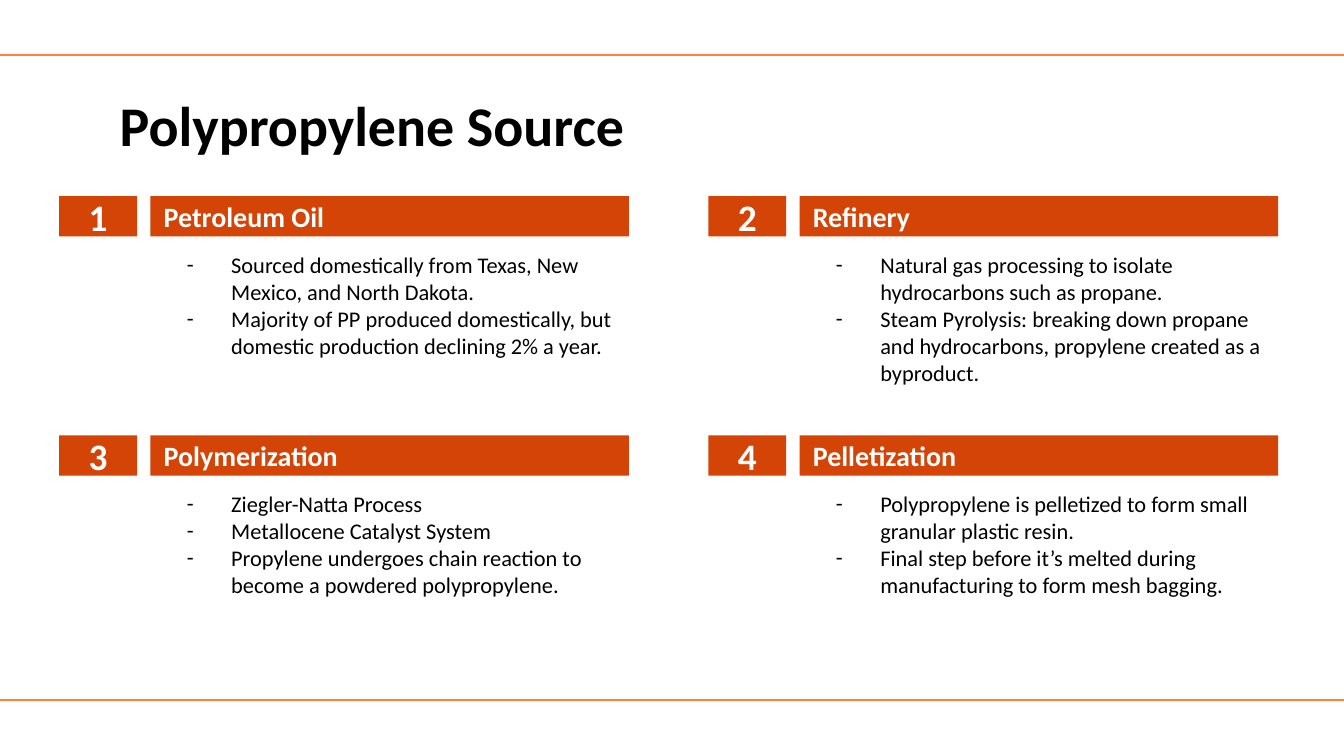
import pptx
import pptx.util
import pptx.dml.color
import pptx.enum.shapes
import pptx.enum.text
from lxml import etree
from pptx.oxml.ns import qn
from pptx.util import Inches

COLORS = {"bar": "D34406", "rule": "FE8239", "ink": "000000", "light": "FFFFFF"}
ALIGN = pptx.enum.text.PP_ALIGN
ANCHOR = pptx.enum.text.MSO_ANCHOR

STEPS = [
    ("Petroleum Oil", [
        "Sourced domestically from Texas, New Mexico, and North Dakota.",
        "Majority of PP produced domestically, but domestic production declining 2% a year."]),
    ("Refinery", [
        "Natural gas processing to isolate hydrocarbons such as propane.",
        "Steam Pyrolysis: breaking down propane and hydrocarbons, "
        "propylene created as a byproduct."]),
    ("Polymerization", [
        "Ziegler-Natta Process",
        "Metallocene Catalyst System",
        "Propylene undergoes chain reaction to become a powdered polypropylene."]),
    ("Pelletization", [
        "Polypropylene is pelletized to form small granular plastic resin.",
        "Final step before it’s melted during manufacturing to form mesh bagging."]),
]


def rgb(name):
    return pptx.dml.color.RGBColor.from_string(COLORS[name])


def dash(para):
    """Give the paragraph a hanging dash bullet."""
    props = para._p.get_or_add_pPr()
    props.set("marL", str(Inches(0.5)))
    props.set("indent", str(Inches(-0.33)))
    tint = etree.SubElement(props, qn("a:buClr"))
    etree.SubElement(tint, qn("a:srgbClr"), val=COLORS["ink"])
    etree.SubElement(props, qn("a:buFont"), typeface="Calibri")
    etree.SubElement(props, qn("a:buChar"), char="-")


def write(frame, text, size=12, color="ink", bold=False, align=ALIGN.LEFT,
          anchor=ANCHOR.TOP, bullet=False):
    """Fill a text frame, one paragraph for each line of text."""
    frame.word_wrap = True
    frame.auto_size = pptx.enum.text.MSO_AUTO_SIZE.NONE
    frame.vertical_anchor = anchor
    frame.margin_left = frame.margin_right = Inches(0.1)
    frame.margin_top = frame.margin_bottom = Inches(0.1)
    frame.text = text
    for para in frame.paragraphs:
        if bullet:
            dash(para)
        para.alignment = align
        para.space_before = pptx.util.Pt(0)
        font = para.runs[0].font
        font.name = "Calibri"
        font.size = pptx.util.Pt(size)
        font.bold = bold
        font.color.rgb = rgb(color)


class Deck:
    def __init__(self):
        self.file = pptx.Presentation()
        self.file.slide_width = Inches(10)
        self.file.slide_height = Inches(10) * 9 // 16
        # The Comparison layout has a title and four body placeholders.
        self.slide = self.file.slides.add_slide(self.file.slide_layouts[4])
        self.shapes = self.slide.shapes

    def place(self, shape, x, y, w, h):
        shape.left, shape.top = Inches(x), Inches(y)
        shape.width, shape.height = Inches(w), Inches(h)

    def title(self, text, *box):
        self.place(self.shapes.title, *box)
        write(self.shapes.title.text_frame, text, size=30, bold=True)

    def rule(self, y):
        line = self.shapes.add_connector(
            pptx.enum.shapes.MSO_CONNECTOR.STRAIGHT,
            Inches(-0.05), Inches(y), Inches(10.05), Inches(y))
        line.line.color.rgb = rgb("rule")
        line.line.width = pptx.util.Pt(0.75)
        etree.SubElement(line._element.spPr, qn("a:effectLst"))

    def bar(self, text, x, y, w, **style):
        shape = self.shapes.add_shape(
            pptx.enum.shapes.MSO_SHAPE.RECTANGLE,
            Inches(x), Inches(y), Inches(w), Inches(0.3))
        shape.shadow.inherit = False
        shape.fill.solid()
        shape.fill.fore_color.rgb = rgb("bar")
        shape.line.fill.background()
        write(shape.text_frame, text, color="light", bold=True,
              anchor=ANCHOR.MIDDLE, **style)

    def list(self, slot, items, *box):
        body = self.slide.placeholders[slot]
        self.place(body, *box)
        write(body.text_frame, "\n".join(items), bullet=True)


def main():
    deck = Deck()
    deck.rule(0.41)
    deck.rule(5.21)
    deck.title("Polypropylene Source", 0.79, 0.57, 8.43, 0.63)
    for i, (name, items) in enumerate(STEPS):
        row, col = divmod(i, 2)
        x, y = 0.44 + 4.83 * col, 1.46 + 1.78 * row
        deck.bar(str(i + 1), x, y, 0.58, size=20, align=ALIGN.CENTER)
        deck.bar(name, x + 0.68, y, 3.56, size=15)
        deck.list(i + 1, items, x + 0.68, y + 0.31, 3.56, 1.4)
    deck.file.save("out.pptx")


if __name__ == "__main__":
    main()
